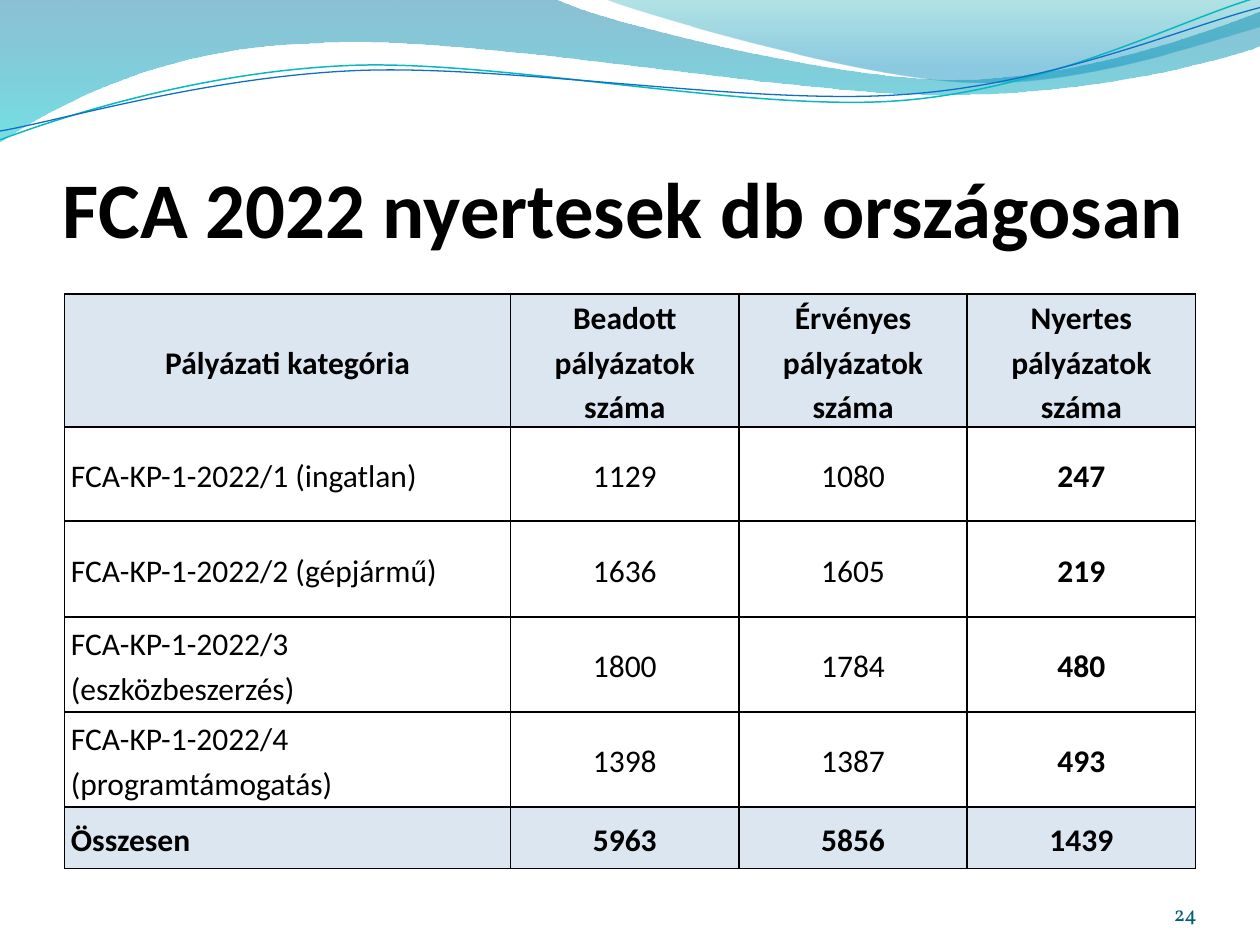
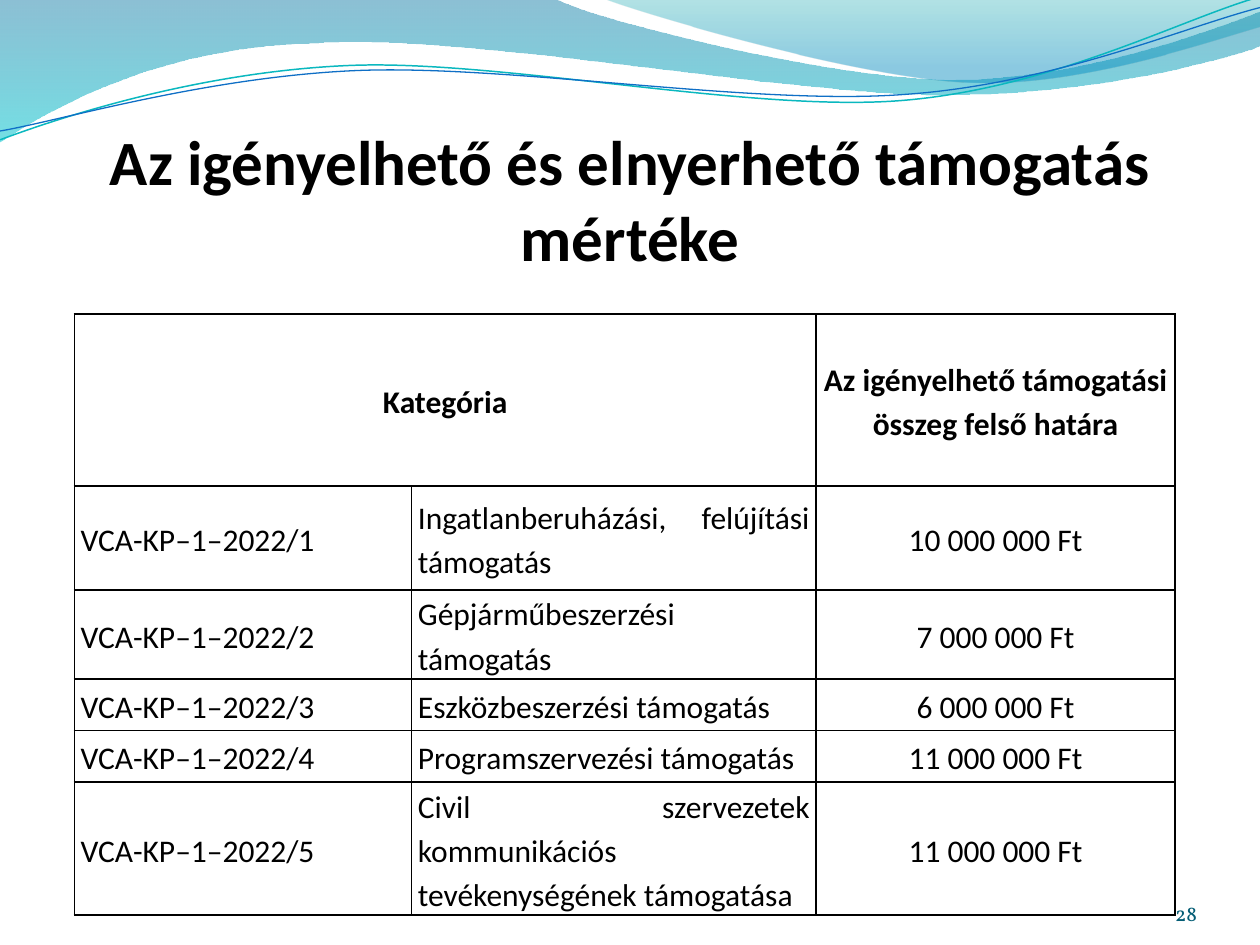
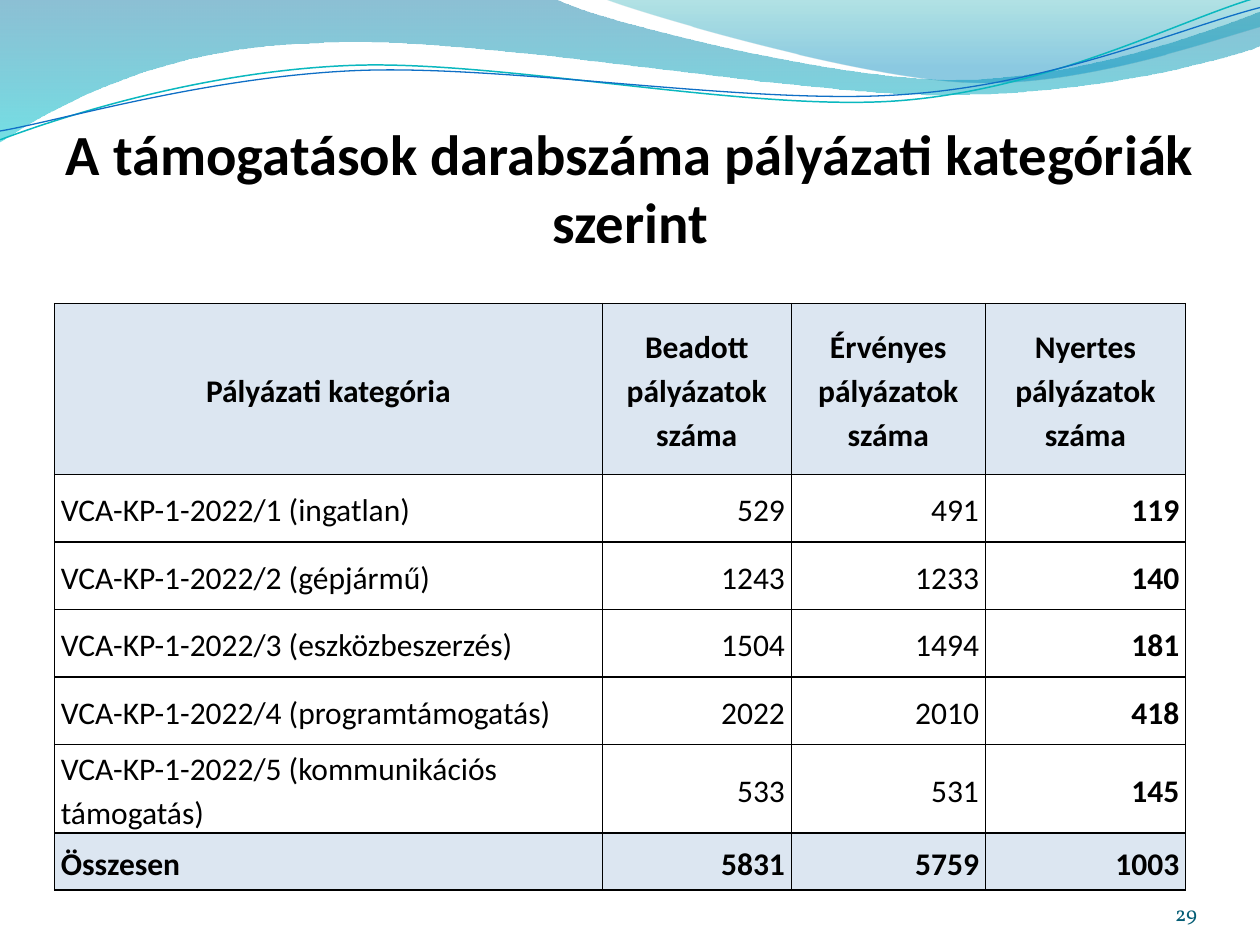
"""Build three slides of grant tables under a shared wave header."""
import math

from lxml import etree
from pptx import Presentation
from pptx import util as u
from pptx.dml.color import RGBColor
from pptx.enum import text
from pptx.oxml import ns

COLUMNS, ROWS = 100, 75
UNIT = u.Inches(0.1)
TITLE_FONT, NUMBER_FONT = "Calibri", "Vollkorn"
COLORS = {
    "ink": "000000",
    "number": "045D75",
    "band": "DCE6F1",
    "deep blue": "0074A1",
    "aqua": "00C6CF",
    "green": "00A1A9",
    "sky": "008BBF",
    "teal line": "0AB8BF",
    "blue line": "0F6FC6",
}
LEFT, CENTER, RIGHT, JUSTIFY = (
    text.PP_ALIGN.LEFT, text.PP_ALIGN.CENTER, text.PP_ALIGN.RIGHT, text.PP_ALIGN.JUSTIFY)

LINE_TILT = -2.7
LINE_CENTER = (49.9, 5.8)
WIDE_WAVE = [
    [(0, 0)],
    [(44, -0.1)],
    [(47.6, 1.7), (66.4, 6.3), (75.8, 6.3)],
    [(85.3, 6.3), (95.8, 2.6), (100, 0.9)],
    [(100.1, 3.6)],
    [(98.3, 4.4), (87, 7.6), (74.6, 7.5)],
    [(62.2, 7.5), (38.2, 2.8), (25.7, 3.4)],
    [(12.9, 3.6), (4.6, 8.3), (-0.1, 11.3)],
]
RIGHT_WAVE = [
    [(47.9, -0.1)],
    [(50.9, 1.1), (68.2, 6.2), (76.9, 6.5)],
    [(85.6, 6.9), (96.1, 3.2), (100, 2.1)],
    [(100, 0)],
]
TEAL_LINE = [
    [(0, 11.1)],
    [(4.8, 9.3), (15.8, 5.7), (27.7, 5.2)],
    [(39.5, 4.7), (59.3, 8.9), (71.3, 8)],
    [(83.3, 7.1), (93.8, 1.5), (99.8, -0.2)],
]
BLUE_LINE = [
    [(0, 10.4)],
    [(4.7, 9.6), (16.4, 6.1), (28.3, 5.6)],
    [(40.3, 5.1), (59.7, 8.4), (71.7, 7.5)],
    [(83.6, 6.7), (94.1, 2.1), (100, 0.6)],
]


def grid(value):
    """Convert grid units to a slide length."""
    return u.Emu(round(value * UNIT))


def rgb(name):
    """Return the named palette colour."""
    return RGBColor.from_string(COLORS[name])


def untilt(point):
    """Turn a point back by the tilt of the header lines."""
    angle = math.radians(-LINE_TILT)
    x, y = (value - center for value, center in zip(point, LINE_CENTER))
    return (LINE_CENTER[0] + x * math.cos(angle) - y * math.sin(angle),
            LINE_CENTER[1] + x * math.sin(angle) + y * math.cos(angle))


def add_curve(slide, segments, closed):
    """Add a freeform of straight lines and cubic curves."""
    segments = [[tuple(map(grid, point)) for point in segment] for segment in segments]
    builder = slide.shapes.build_freeform(*segments[0][-1])
    builder.add_line_segments([segment[-1] for segment in segments[1:]], close=closed)
    shape = builder.convert_to_shape()
    shape.shadow.inherit = False
    lines = list(shape.element.spPr.iter(ns.qn("a:lnTo")))
    for line, segment in zip(lines, segments[1:]):
        if len(segment) == 3:
            curve = etree.Element(ns.qn("a:cubicBezTo"))
            for x, y in segment:
                etree.SubElement(curve, ns.qn("a:pt"),
                                 x=str(x - shape.left), y=str(y - shape.top))
            line.getparent().replace(line, curve)
    return shape


def add_wave(slide, segments, stops):
    """Add a wave with a translucent gradient from top to bottom."""
    shape = add_curve(slide, segments, True)
    shape.line.fill.background()
    shape.fill.gradient()
    shape.fill.gradient_angle = 270
    for stop, (position, color, _) in zip(shape.fill.gradient_stops, stops):
        stop.position = position
        stop.color.rgb = rgb(color)
    for node, (_, _, opacity) in zip(shape.element.spPr.iter(ns.qn("a:srgbClr")), stops):
        etree.SubElement(node, ns.qn("a:alpha"), val=str(opacity * 1000))


def add_wave_line(slide, segments, color, width):
    """Add an open, slightly tilted curved line."""
    level = [[untilt(point) for point in segment] for segment in segments]
    shape = add_curve(slide, level, False)
    shape.rotation = LINE_TILT
    shape.fill.background()
    shape.line.color.rgb = rgb(color)
    shape.line.width = u.Pt(width)


def write_text(frame, content, size=18, font=TITLE_FONT, color="ink", bold=False,
               align=LEFT, spacing=None):
    """Write formatted text into a text frame."""
    frame.word_wrap = True
    paragraph = frame.paragraphs[0]
    paragraph.alignment = align
    paragraph.line_spacing = spacing
    run = paragraph.add_run()
    run.text = content
    run.font.size = u.Pt(size)
    run.font.name = font
    run.font.bold = bold
    run.font.color.rgb = rgb(color)


def add_text(slide, box, content, **text_format):
    """Add a text box whose text stands on its bottom edge."""
    frame = slide.shapes.add_textbox(*map(grid, box)).text_frame
    frame.margin_left = frame.margin_right = frame.margin_top = frame.margin_bottom = 0
    frame.vertical_anchor = text.MSO_ANCHOR.BOTTOM
    write_text(frame, content, **text_format)


def add_borders(cell):
    """Draw a thin line on each side of a cell."""
    properties = cell._tc.get_or_add_tcPr()
    for index, side in enumerate(("lnL", "lnR", "lnT", "lnB")):
        line = etree.Element(ns.qn(f"a:{side}"), w=str(u.Pt(1)))
        fill = etree.SubElement(line, ns.qn("a:solidFill"))
        etree.SubElement(fill, ns.qn("a:srgbClr"), val=COLORS["ink"])
        properties.insert(index, line)


def format_cell(cell, banded):
    """Set the margins, fill and borders of a cell."""
    cell.margin_left = cell.margin_right = grid(0.5)
    cell.margin_top = cell.margin_bottom = 0
    cell.vertical_anchor = text.MSO_ANCHOR.MIDDLE
    if banded:
        cell.fill.solid()
        cell.fill.fore_color.rgb = rgb("band")
    else:
        cell.fill.background()
    add_borders(cell)


def add_grant_table(slide, corner, widths, heights, rows, aligns, summary=True):
    """Add a table; a summary has bands, a total row and a bold last column."""
    frame = slide.shapes.add_table(len(rows), len(widths), *map(
        grid, (*corner, sum(widths), sum(heights))))
    table = frame.table
    table.first_row = table.horz_banding = False
    for column, width in zip(table.columns, widths):
        column.width = grid(width)
    for row, height in zip(table.rows, heights):
        row.height = grid(height)
    for r, values in enumerate(rows):
        header = r == 0
        banded = summary and r in (0, len(rows) - 1)
        for c, value in enumerate(values):
            cell = table.cell(r, c)
            format_cell(cell, banded)
            if value is None:
                table.cell(r, c - 1).merge(cell)
                continue
            bold = header or banded or (summary and c == len(values) - 1)
            write_text(cell.text_frame, value, bold=bold, spacing=1.15,
                       align=CENTER if header else aligns[c])


def add_base_slide(presentation, title, title_top, title_height, size, number, align=CENTER):
    """Add a slide with the wave header, a title and a slide number."""
    slide = presentation.slides.add_slide(presentation.slide_layouts[6])
    add_wave(slide, WIDE_WAVE, [(0, "deep blue", 45), (1, "aqua", 55)])
    add_wave(slide, RIGHT_WAVE, [(0, "green", 30), (0.8, "sky", 45)])
    add_wave_line(slide, TEAL_LINE, "teal line", 0.85)
    add_wave_line(slide, BLUE_LINE, "blue line", 0.75)
    add_text(slide, (5, title_top, 90, title_height), title,
             size=size, bold=True, align=align)
    add_text(slide, (86.7, 69.5, 8.3, 4), number, size=12, font=NUMBER_FONT,
             color="number", align=RIGHT)
    return slide


def main():
    """Build and save the presentation."""
    presentation = Presentation()
    presentation.slide_width, presentation.slide_height = grid(COLUMNS), grid(ROWS)
    summary_header = ("Pályázati kategória", "Beadott pályázatok száma",
                      "Érvényes pályázatok száma", "Nyertes pályázatok száma")

    slide = add_base_slide(presentation, "FCA 2022 nyertesek db országosan",
                           7.7, 12.5, 45, "24", LEFT)
    add_grant_table(slide, (5.13, 23.33), [35.4] + [18.12] * 3,
                    [10.55, 7.48, 7.6, 7.54, 7.54, 4.9], [
        summary_header,
        ("FCA-KP-1-2022/1 (ingatlan)", "1129", "1080", "247"),
        ("FCA-KP-1-2022/2 (gépjármű)", "1636", "1605", "219"),
        ("FCA-KP-1-2022/3 (eszközbeszerzés)", "1800", "1784", "480"),
        ("FCA-KP-1-2022/4 (programtámogatás)", "1398", "1387", "493"),
        ("Összesen", "5963", "5856", "1439"),
    ], [JUSTIFY] + [CENTER] * 3)

    slide = add_base_slide(presentation, "Az igényelhető és elnyerhető támogatás mértéke",
                           9.2, 12.55, 36, "28")
    add_grant_table(slide, (5.9, 24.9), [26.77, 32.1, 28.5],
                    [13.67, 8.25, 7.06, 4.1, 4.1, 10.55], [
        ("Kategória", None, "Az igényelhető támogatási összeg felső határa"),
        ("VCA-KP–1–2022/1", "Ingatlanberuházási, felújítási támogatás", "10 000 000 Ft"),
        ("VCA-KP–1–2022/2", "Gépjárműbeszerzési támogatás", "7 000 000 Ft"),
        ("VCA-KP–1–2022/3", "Eszközbeszerzési támogatás", "6 000 000 Ft"),
        ("VCA-KP–1–2022/4", "Programszervezési támogatás", "11 000 000 Ft"),
        ("VCA-KP–1–2022/5", "Civil szervezetek kommunikációs tevékenységének támogatása",
         "11 000 000 Ft"),
    ], [JUSTIFY, JUSTIFY, CENTER], summary=False)

    slide = add_base_slide(presentation, "A támogatások darabszáma pályázati kategóriák szerint",
                           9.2, 11, 32.4, "29")
    add_grant_table(slide, (4.33, 24.1), [43.47, 15, 15.4, 15.9],
                    [13.55] + [5.36] * 4 + [7.04, 4.5], [
        summary_header,
        ("VCA-KP-1-2022/1 (ingatlan)", "529", "491", "119"),
        ("VCA-KP-1-2022/2 (gépjármű)", "1243", "1233", "140"),
        ("VCA-KP-1-2022/3 (eszközbeszerzés)", "1504", "1494", "181"),
        ("VCA-KP-1-2022/4 (programtámogatás)", "2022", "2010", "418"),
        ("VCA-KP-1-2022/5 (kommunikációs támogatás)", "533", "531", "145"),
        ("Összesen", "5831", "5759", "1003"),
    ], [LEFT] + [RIGHT] * 3)

    presentation.save("out.pptx")


if __name__ == "__main__":
    main()
